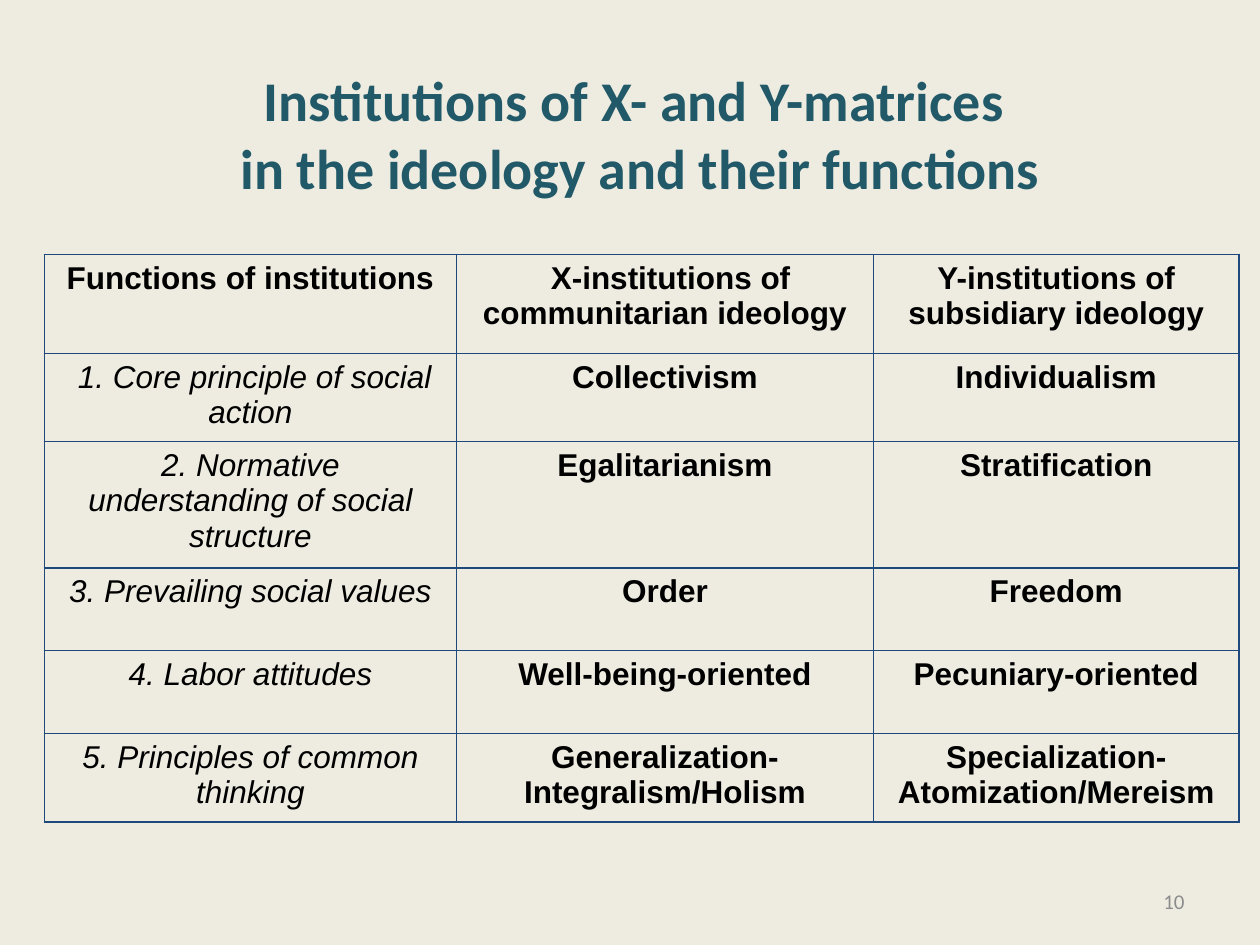
"""Build the slide on institutions of X- and Y-matrices in the ideology."""
from dataclasses import dataclass

import lxml.etree
import pptx
import pptx.dml.color
import pptx.enum.text
import pptx.oxml.ns
import pptx.util

Pt = pptx.util.Pt
Color = pptx.dml.color.RGBColor
Align = pptx.enum.text.PP_ALIGN
Anchor = pptx.enum.text.MSO_ANCHOR
qn = pptx.oxml.ns.qn


@dataclass(frozen=True)
class Theme:
    background: str = "EEECE1"
    title: str = "215968"
    text: str = "000000"
    border: str = "1F497D"
    muted: str = "8C8C8C"
    heading_font: str = "Calibri"
    table_font: str = "Arial"
    title_size: float = 32
    table_size: float = 18
    number_size: float = 12
    border_width: float = 1


@dataclass(frozen=True)
class Box:
    left: float
    top: float
    width: float
    height: float

    def lengths(self) -> tuple:
        return Pt(self.left), Pt(self.top), Pt(self.width), Pt(self.height)


@dataclass(frozen=True)
class Institution:
    function: str
    x_form: str
    y_form: str
    height: float


THEME = Theme()
TITLE_BOX = Box(36, 19.5, 660, 113)
NUMBER_BOX = Box(516, 500.5, 168, 28.75)
TABLE_LEFT, TABLE_TOP = 25.4, 145.3
COLUMN_WIDTHS = (235.4, 238.4, 208.8)
HEADER_INDENT = 6.5
TWO_LINES, THREE_LINES = 47.4, 68

HEADER = Institution(
    "Functions of institutions",
    "X-institutions of communitarian ideology",
    "Y-institutions of subsidiary ideology",
    56.7,
)
INSTITUTIONS = (
    Institution(" 1. Core principle of social action", "Collectivism", "Individualism", TWO_LINES),
    Institution("2. Normative understanding of social structure", "Egalitarianism",
                "Stratification", THREE_LINES),
    Institution("3. Prevailing social values", "Order", "Freedom", TWO_LINES),
    Institution("4. Labor attitudes", "Well-being-oriented", "Pecuniary-oriented", TWO_LINES),
    Institution("5. Principles of common thinking", "Generalization-Integralism/Holism",
                "Specialization-Atomization/Mereism", TWO_LINES),
)


def write_text(frame, text: str, *, font: str, size: float, color: str, bold: bool = False,
               italic: bool = False, align=Align.CENTER, anchor=None, indent: float = 0) -> None:
    frame.word_wrap = True
    if anchor is not None:
        frame.vertical_anchor = anchor
    paragraph = frame.paragraphs[0]
    paragraph.text = text
    paragraph.alignment = align
    if indent:
        paragraph._p.get_or_add_pPr().set("indent", str(Pt(indent)))
    for run in paragraph.runs:
        run.font.name = font
        run.font.size = Pt(size)
        run.font.bold = bold
        run.font.italic = italic
        run.font.color.rgb = Color.from_string(color)


def draw_borders(cell, color: str, width: float) -> None:
    properties = cell._tc.get_or_add_tcPr()
    for position, side in enumerate(("a:lnL", "a:lnR", "a:lnT", "a:lnB")):
        line = lxml.etree.Element(qn(side), w=str(Pt(width)))
        fill = lxml.etree.SubElement(line, qn("a:solidFill"))
        lxml.etree.SubElement(fill, qn("a:srgbClr"), val=color)
        properties.insert(position, line)


def draw_table(slide, rows: tuple[Institution, ...]) -> None:
    box = Box(TABLE_LEFT, TABLE_TOP, sum(COLUMN_WIDTHS), sum(row.height for row in rows))
    table = slide.shapes.add_table(len(rows), len(COLUMN_WIDTHS), *box.lengths()).table
    table.first_row = table.horz_banding = False
    for column, width in zip(table.columns, COLUMN_WIDTHS):
        column.width = Pt(width)
    for row_index, institution in enumerate(rows):
        table.rows[row_index].height = Pt(institution.height)
        texts = (institution.function, institution.x_form, institution.y_form)
        for column_index, text in enumerate(texts):
            cell = table.cell(row_index, column_index)
            is_function = row_index > 0 and column_index == 0
            is_indented = row_index == 0 and column_index == 1
            cell.fill.background()
            draw_borders(cell, THEME.border, THEME.border_width)
            write_text(cell.text_frame, text, font=THEME.table_font, size=THEME.table_size,
                       color=THEME.text, bold=not is_function, italic=is_function,
                       indent=HEADER_INDENT if is_indented else 0)


def main() -> None:
    presentation = pptx.Presentation()
    presentation.slide_width, presentation.slide_height = Pt(720), Pt(540)
    slide = presentation.slides.add_slide(presentation.slide_layouts[5])
    slide.background.fill.solid()
    slide.background.fill.fore_color.rgb = Color.from_string(THEME.background)

    title = slide.shapes.title
    title.left, title.top, title.width, title.height = TITLE_BOX.lengths()
    write_text(title.text_frame, "Institutions of X- and Y-matrices \vin the ideology and their functions",
               font=THEME.heading_font, size=THEME.title_size, color=THEME.title, bold=True,
               anchor=Anchor.MIDDLE)

    number = slide.shapes.add_textbox(*NUMBER_BOX.lengths())
    write_text(number.text_frame, "10", font=THEME.heading_font, size=THEME.number_size,
               color=THEME.muted, align=Align.RIGHT, anchor=Anchor.MIDDLE)

    draw_table(slide, (HEADER, *INSTITUTIONS))
    presentation.save("out.pptx")


if __name__ == "__main__":
    main()
